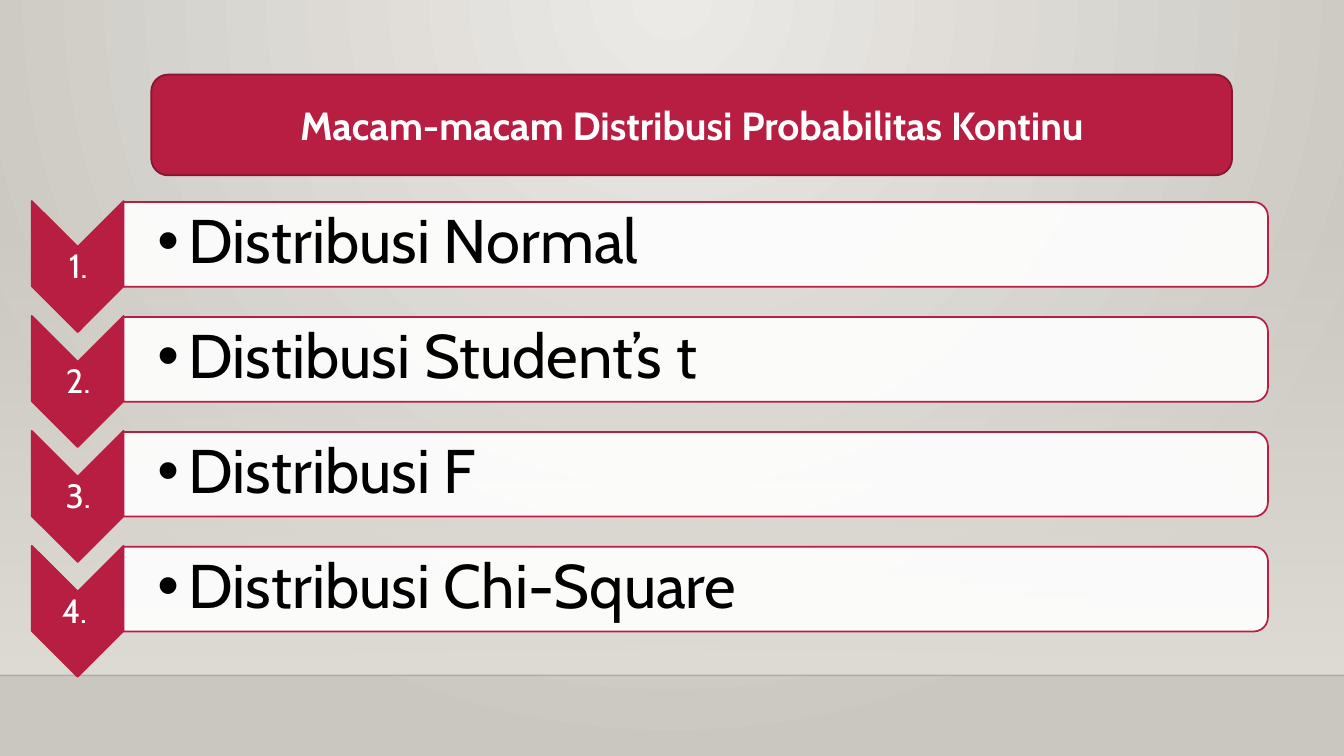
from lxml.etree import SubElement
from pptx import Presentation
from pptx.dml.color import RGBColor
from pptx.enum.shapes import MSO_CONNECTOR, MSO_SHAPE
from pptx.enum.text import MSO_ANCHOR, PP_ALIGN
from pptx.oxml.ns import qn
from pptx.util import Inches, Pt

HEX = {"red": "B71E42", "edge": "871631", "white": "FFFFFF", "black": "000000",
       "light": "ECEAE7", "dark": "CAC7C1", "wall": "DFDBD5", "rule": "000001"}
RGB = {name: RGBColor.from_string(code) for name, code in HEX.items()}

deck = Presentation()
deck.slide_width, deck.slide_height = Inches(13.33), Inches(7.5)
slide = deck.slides.add_slide(deck.slide_layouts[6])
shapes = slide.shapes


def draw(kind, box, fill=None, line=None, turn=0):
    shape = shapes.add_shape(kind, *map(Inches, box))
    shape.shadow.inherit = False
    shape.rotation = turn
    if fill:
        shape.fill.solid()
        shape.fill.fore_color.rgb = RGB[fill]
    if line:
        shape.line.color.rgb = RGB[line]
        shape.line.width = Pt(1.25)
    else:
        shape.line.fill.background()
    return shape


def write(shape, text, size, color, bold=False, align=PP_ALIGN.CENTER,
          inset=0.1, left=None, space=0.9, bullet=False):
    frame = shape.text_frame
    frame.word_wrap = True
    frame.vertical_anchor = MSO_ANCHOR.MIDDLE
    frame.margin_top = frame.margin_right = frame.margin_bottom = Inches(inset)
    frame.margin_left = Inches(left or inset)
    para = frame.paragraphs[0]
    para.alignment, para.line_spacing = align, space
    if bullet:
        props = para._p.get_or_add_pPr()
        props.set("marL", str(Inches(0.31)))
        props.set("indent", str(-Inches(0.31)))
        SubElement(props, qn("a:buFont"), typeface="Arial")
        SubElement(props, qn("a:buChar"), char="•")
    run = para.add_run()
    run.text = text
    run.font.name, run.font.size, run.font.bold = "Cabin", Pt(size), bold
    run.font.color.rgb = RGB[color]


# Background: round glow from the top centre
back = slide.background.fill
back.gradient()
for stop, name in zip(back.gradient_stops, ("light", "dark")):
    stop.color.rgb = RGB[name]
glow = slide.element.find(".//" + qn("a:gradFill"))
glow.remove(glow.find(qn("a:lin")))
ring = SubElement(glow, qn("a:path"), path="circle")
SubElement(ring, qn("a:fillToRect"), l="43000", t="0", r="43000", b="100000")

# Wall that fades in downwards, and the floor line
wall = draw(MSO_SHAPE.RECTANGLE, (0, 2.21, 13.33, 4.49))
wall.fill.gradient()
wall.fill.gradient_angle = 270
for stop in wall.fill.gradient_stops:
    stop.color.rgb = RGB["wall"]
floor = shapes.add_connector(MSO_CONNECTOR.STRAIGHT, Inches(0), Inches(6.7),
                             Inches(13.33), Inches(6.7))
floor.line.color.rgb = RGB["rule"]
floor.line.width = Pt(1)
SubElement(floor.element.spPr, qn("a:effectLst"))
sheer = [(wall, 0), (floor, 20)]

# Title
title = draw(MSO_SHAPE.ROUNDED_RECTANGLE, (1.5, 0.74, 10.72, 1), "red", "edge")
write(title, "Macam-macam Distribusi Probabilitas Kontinu", 28, "white",
      bold=True, space=1)

# Numbered list
items = [("1.", "Distribusi Normal"), ("2.", "Distibusi Student’s t"),
         ("3.", "Distribusi F"), ("4. ", "Distribusi Chi-Square")]
for row, (label, text) in enumerate(items):
    top = 2 + row * 1.14
    draw(MSO_SHAPE.CHEVRON, (0.12, top + 0.19, 1.3, 0.91), "red", "red", 90)
    num = shapes.add_textbox(*map(Inches, (0.32, top + 0.46, 0.91, 0.39)))
    write(num, label, 24, "white", inset=0.02)
    bar = draw(MSO_SHAPE.ROUND_2_SAME_RECTANGLE,
               (6.48, top - 5.25, 0.84, 11.35), "white", "red", 90)
    sheer.append((bar, 90))
    body = shapes.add_textbox(*map(Inches, (1.22, top + 0.04, 11.31, 0.76)))
    write(body, text, 44, "black", align=PP_ALIGN.LEFT, inset=0.03,
          left=0.34, bullet=True)

# Opacity in percent, set on the first colour of each shape
for shape, share in sheer:
    tint = shape.element.spPr.find(".//" + qn("a:srgbClr"))
    SubElement(tint, qn("a:alpha"), val=str(share * 1000))

deck.save("out.pptx")
